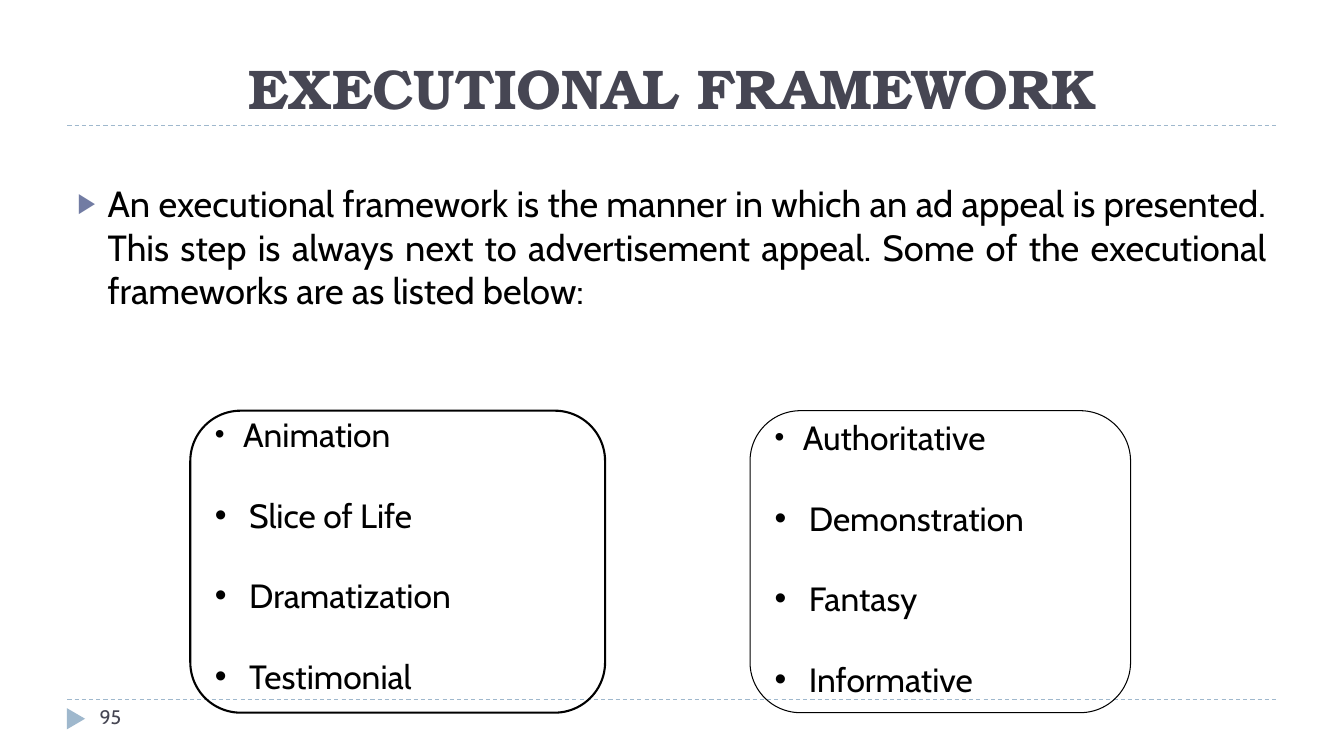
"""Build the executional framework slide with its two lists of examples."""
import dataclasses

import lxml.etree
import pptx
import pptx.dml.color
import pptx.enum.dml
import pptx.enum.shapes
import pptx.enum.text
import pptx.oxml.ns
import pptx.util

Inches = pptx.util.Inches
Pt = pptx.util.Pt
RGBColor = pptx.dml.color.RGBColor
Align = pptx.enum.text.PP_ALIGN
Anchor = pptx.enum.text.MSO_ANCHOR
ShapeType = pptx.enum.shapes.MSO_SHAPE
qn = pptx.oxml.ns.qn

BLACK = RGBColor(0x00, 0x00, 0x00)
SLATE = RGBColor(0x46, 0x46, 0x53)
PALE_BLUE = RGBColor(0x9F, 0xB8, 0xCD)
INDIGO = RGBColor(0x72, 0x7C, 0xA3)
BODY_FONT = "Cabin"
TITLE_FONT = "TeX Gyre Bonum"


@dataclasses.dataclass(frozen=True)
class Bullet:
    character: str
    indent: float
    percent: int
    color: RGBColor


@dataclasses.dataclass(frozen=True)
class TextBlock:
    text: str
    left: float
    top: float
    width: float
    height: float
    size: float
    font: str = BODY_FONT
    color: RGBColor = BLACK
    bold: bool = False
    align: Align = Align.LEFT
    anchor: Anchor = Anchor.TOP
    bullet: Bullet | None = None


@dataclasses.dataclass(frozen=True)
class FrameworkBox:
    left: float
    width: float
    line_width: float
    bottom_inset: float
    items: tuple[str, ...]


TEXT_BLOCKS = (
    TextBlock("EXECUTIONAL FRAMEWORK", 0.67, 0.3, 12.02, 0.95, 40, TITLE_FONT,
              SLATE, True, Align.CENTER, Anchor.BOTTOM),
    TextBlock("95", 0.89, 6.95, 2.89, 0.4, 14, color=SLATE),
    TextBlock("An executional framework is the manner in which an ad appeal is presented. "
              "This step is always next to advertisement appeal. "
              "Some of the executional frameworks are as listed below:",
              0.67, 1.75, 12.02, 5.5, 26, align=Align.JUSTIFY,
              bullet=Bullet("▶", 0.3, 76, INDIGO)),
)
FRAMEWORK_BOXES = (
    FrameworkBox(1.89, 4.12, 1.5, 0.18,
                 ("Animation", "Slice of Life", "Dramatization", "Testimonial")),
    FrameworkBox(7.45, 3.78, 0.75, 0.12,
                 ("Authoritative", "Demonstration", "Fantasy", "Informative")),
)
FIRST_ITEM_BULLET = Bullet("•", 0.28, 83, BLACK)
ITEM_BULLET = Bullet("•", 0.34, 100, BLACK)


def add_run(paragraph, text: str, font: str, size: float, color: RGBColor,
            bold: bool = False) -> None:
    run = paragraph.add_run()
    run.text = text
    run.font.name = font
    run.font.size = Pt(size)
    run.font.bold = bold
    run.font.color.rgb = color


def set_bullet(paragraph, bullet: Bullet) -> None:
    properties = paragraph._p.get_or_add_pPr()
    properties.set("marL", str(Inches(bullet.indent)))
    properties.set("indent", str(-Inches(bullet.indent)))
    color = lxml.etree.SubElement(properties, qn("a:buClr"))
    lxml.etree.SubElement(color, qn("a:srgbClr"), val=str(bullet.color))
    lxml.etree.SubElement(properties, qn("a:buSzPct"), val=str(bullet.percent * 1000))
    lxml.etree.SubElement(properties, qn("a:buFont"), typeface="Arial")
    lxml.etree.SubElement(properties, qn("a:buChar"), char=bullet.character)


def add_rule(slide, top: float) -> None:
    connector = slide.shapes.add_connector(
        pptx.enum.shapes.MSO_CONNECTOR.STRAIGHT,
        Inches(0.67), Inches(top), Inches(12.68), Inches(top))
    connector.line.color.rgb = PALE_BLUE
    connector.line.width = Pt(0.75)
    connector.line.dash_style = pptx.enum.dml.MSO_LINE.DASH
    lxml.etree.SubElement(connector._element.spPr, qn("a:effectLst"))


def add_page_marker(slide) -> None:
    marker = slide.shapes.add_shape(ShapeType.ISOSCELES_TRIANGLE, Inches(0.65),
                                    Inches(7.05), Inches(0.21), Inches(0.18))
    marker.rotation = 90
    marker.shadow.inherit = False
    marker.fill.solid()
    marker.fill.fore_color.rgb = PALE_BLUE
    marker.line.fill.background()


def add_text_block(slide, block: TextBlock) -> None:
    shape = slide.shapes.add_textbox(Inches(block.left), Inches(block.top),
                                     Inches(block.width), Inches(block.height))
    frame = shape.text_frame
    frame.word_wrap = True
    frame.vertical_anchor = block.anchor
    paragraph = frame.paragraphs[0]
    paragraph.alignment = block.align
    if block.bullet:
        set_bullet(paragraph, block.bullet)
    add_run(paragraph, block.text, block.font, block.size, block.color, block.bold)


def add_framework_box(slide, box: FrameworkBox) -> None:
    shape = slide.shapes.add_shape(ShapeType.FLOWCHART_ALTERNATE_PROCESS,
                                   Inches(box.left), Inches(4.08),
                                   Inches(box.width), Inches(3))
    shape.shadow.inherit = False
    shape.fill.background()
    shape.line.color.rgb = BLACK
    shape.line.width = Pt(box.line_width)
    frame = shape.text_frame
    frame.word_wrap = True
    frame.vertical_anchor = Anchor.MIDDLE
    frame.margin_bottom = Inches(box.bottom_inset)
    for index, item in enumerate(box.items):
        paragraph = frame.add_paragraph() if index else frame.paragraphs[0]
        paragraph.alignment = Align.LEFT
        if index:
            paragraph.space_before = Pt(28.8)
        set_bullet(paragraph, ITEM_BULLET if index else FIRST_ITEM_BULLET)
        add_run(paragraph, item, BODY_FONT, 24, BLACK)


def main() -> None:
    presentation = pptx.Presentation()
    presentation.slide_width = Inches(13.35)
    presentation.slide_height = Inches(7.5)
    slide = presentation.slides.add_slide(presentation.slide_layouts[6])
    for top in (6.95, 1.25):
        add_rule(slide, top)
    add_page_marker(slide)
    for block in TEXT_BLOCKS:
        add_text_block(slide, block)
    for box in FRAMEWORK_BOXES:
        add_framework_box(slide, box)
    presentation.save("out.pptx")


if __name__ == "__main__":
    main()
